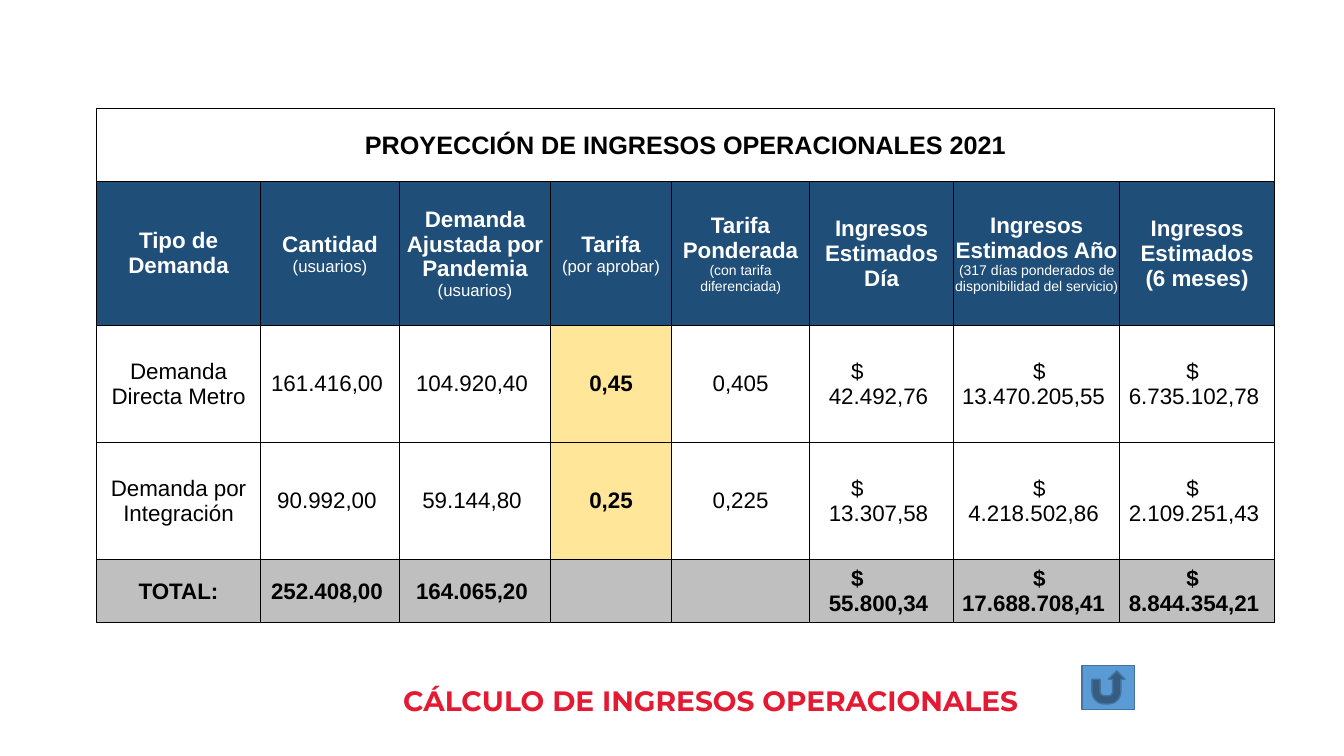
from lxml.etree import SubElement
from pptx import Presentation
from pptx.dml.color import RGBColor
from pptx.enum.shapes import MSO_SHAPE
from pptx.enum.text import MSO_ANCHOR, MSO_AUTO_SIZE, PP_ALIGN
from pptx.oxml.ns import qn
from pptx.util import Pt

COLORS = {
    "black": "000000", "white": "FFFFFF", "navy": "1F4E79", "cream": "FFE699",
    "gray": "BFBFBF", "red": "E41A33", "blue": "5B9BD5", "outline": "43739E",
}
COLUMN_WIDTHS = [117.1, 99.3, 107.9, 86.4, 98.6, 102.9, 118.6, 110.7]
ROW_HEIGHTS = [51.9, 103, 83.5, 83.5, 45.4]
CURRENCY_INDENTS = {5: 29, 6: 56, 7: 47}
RATE_COLUMN = 3
REPORT_NAME = "PROYECCIÓN DE INGRESOS OPERACIONALES 2021"
HEADINGS = [
    ("Tipo de Demanda", "", 12),
    ("Cantidad", "(usuarios)", 12),
    ("Demanda Ajustada por Pandemia", "(usuarios)", 12),
    ("Tarifa", "(por aprobar)", 12),
    ("Tarifa Ponderada", "(con tarifa diferenciada)", 10),
    ("Ingresos Estimados Día", "", 12),
    ("Ingresos Estimados Año", "(317 días ponderados de disponibilidad del servicio)", 10),
    ("Ingresos Estimados", "(6 meses)", 16),
]
DEMAND_ROWS = [
    ["Demanda Directa Metro", "161.416,00 ", "104.920,40 ", "0,45", "0,405",
     "42.492,76 ", "13.470.205,55 ", "6.735.102,78 "],
    ["Demanda por Integración", "90.992,00 ", "59.144,80 ", "0,25", "0,225",
     "13.307,58 ", "4.218.502,86 ", "2.109.251,43 "],
    ["TOTAL:", "252.408,00 ", "164.065,20 ", "", "",
     "55.800,34 ", "17.688.708,41 ", "8.844.354,21 "],
]


def rgb(name):
    """Return a named colour."""
    return RGBColor.from_string(COLORS[name])


def add_text(paragraph, text, size, color, bold=False, font="Arial"):
    """Append one formatted run."""
    run = paragraph.add_run()
    run.text = text
    run.font.name, run.font.size, run.font.bold = font, Pt(size), bold
    run.font.color.rgb = rgb(color)


def style_cell(cell, fill):
    """Give a cell its borders, fill, margins and centring."""
    properties = cell._tc.get_or_add_tcPr()
    for side in ("a:lnL", "a:lnR", "a:lnT", "a:lnB"):
        border = SubElement(properties, qn(side), w=str(Pt(0.5)))
        SubElement(SubElement(border, qn("a:solidFill")), qn("a:srgbClr"), val=COLORS["black"])
    cell.fill.solid()
    cell.fill.fore_color.rgb = rgb(fill)
    cell.margin_left = cell.margin_right = cell.margin_top = Pt(0.72)
    cell.margin_bottom = 0
    cell.vertical_anchor = MSO_ANCHOR.MIDDLE
    cell.text_frame.paragraphs[0].alignment = PP_ALIGN.CENTER


def fill_heading(cell, heading, note, note_size):
    """Write a column heading with its smaller note."""
    style_cell(cell, "navy")
    add_text(cell.text_frame.paragraphs[0], heading, 16, "white", True)
    if note:
        note_line = cell.text_frame.add_paragraph()
        note_line.alignment = PP_ALIGN.CENTER
        add_text(note_line, note, note_size, "white", note_size == 16)


def fill_value(cell, value, column, is_total):
    """Write one demand value, with a currency line above amounts."""
    is_rate = column == RATE_COLUMN
    style_cell(cell, "gray" if is_total else "cream" if is_rate else "white")
    if not value:
        return
    bold = is_total or is_rate
    value_line = cell.text_frame.paragraphs[0]
    if column in CURRENCY_INDENTS:
        value_line.alignment = PP_ALIGN.LEFT
        indent = value_line._p.get_or_add_pPr()
        indent.set("marL", str(Pt(CURRENCY_INDENTS[column])))
        indent.set("indent", "0")
        add_text(value_line, "$", 16, "black", bold)
        value_line = cell.text_frame.add_paragraph()
        value_line.alignment = PP_ALIGN.CENTER
    add_text(value_line, value, 16, "black", bold)


def add_income_table(slide, left, top):
    """Build the income projection table."""
    income = slide.shapes.add_table(
        len(ROW_HEIGHTS), len(COLUMN_WIDTHS), Pt(left), Pt(top),
        Pt(sum(COLUMN_WIDTHS)), Pt(sum(ROW_HEIGHTS))).table
    income.first_row = income.horz_banding = False
    for column, width in zip(income.columns, COLUMN_WIDTHS):
        column.width = Pt(width)
    for row, height in zip(income.rows, ROW_HEIGHTS):
        row.height = Pt(height)
    for column, heading in enumerate(HEADINGS):
        style_cell(income.cell(0, column), "white")
        fill_heading(income.cell(1, column), *heading)
    report_cell = income.cell(0, 0)
    report_cell.merge(income.cell(0, len(HEADINGS) - 1))
    add_text(report_cell.text_frame.paragraphs[0], REPORT_NAME, 18, "black", True)
    for row, values in enumerate(DEMAND_ROWS, 2):
        for column, value in enumerate(values):
            fill_value(income.cell(row, column), value, column, values is DEMAND_ROWS[-1])


def add_title(slide, left, top, width, height):
    """Place the slide title below the table."""
    title = slide.shapes.title
    title.left, title.top, title.width, title.height = map(Pt, (left, top, width, height))
    frame = title.text_frame
    frame.word_wrap = True
    frame.auto_size = MSO_AUTO_SIZE.SHAPE_TO_FIT_TEXT
    frame.vertical_anchor = MSO_ANCHOR.TOP
    frame.paragraphs[0].alignment = PP_ALIGN.LEFT
    add_text(frame.paragraphs[0], "CÁLCULO DE INGRESOS OPERACIONALES", 20, "red", True, "Montserrat")


def add_return_button(slide, left, top, width, height):
    """Draw the return button beside the title."""
    button = slide.shapes.add_shape(
        MSO_SHAPE.ACTION_BUTTON_RETURN, Pt(left), Pt(top), Pt(width), Pt(height))
    button.shadow.inherit = False
    button.fill.solid()
    button.fill.fore_color.rgb = rgb("blue")
    button.line.color.rgb = rgb("outline")
    button.line.width = Pt(1)


def main():
    """Build and save the slide."""
    presentation = Presentation()
    presentation.slide_width, presentation.slide_height = Pt(960), Pt(540)
    slide = presentation.slides.add_slide(presentation.slide_layouts[5])
    add_income_table(slide, 69, 77.5)
    add_title(slide, 280.8, 484.5, 519, 31.5)
    add_return_button(slide, 773, 475.3, 37.6, 31.5)
    presentation.save("out.pptx")


if __name__ == "__main__":
    main()
